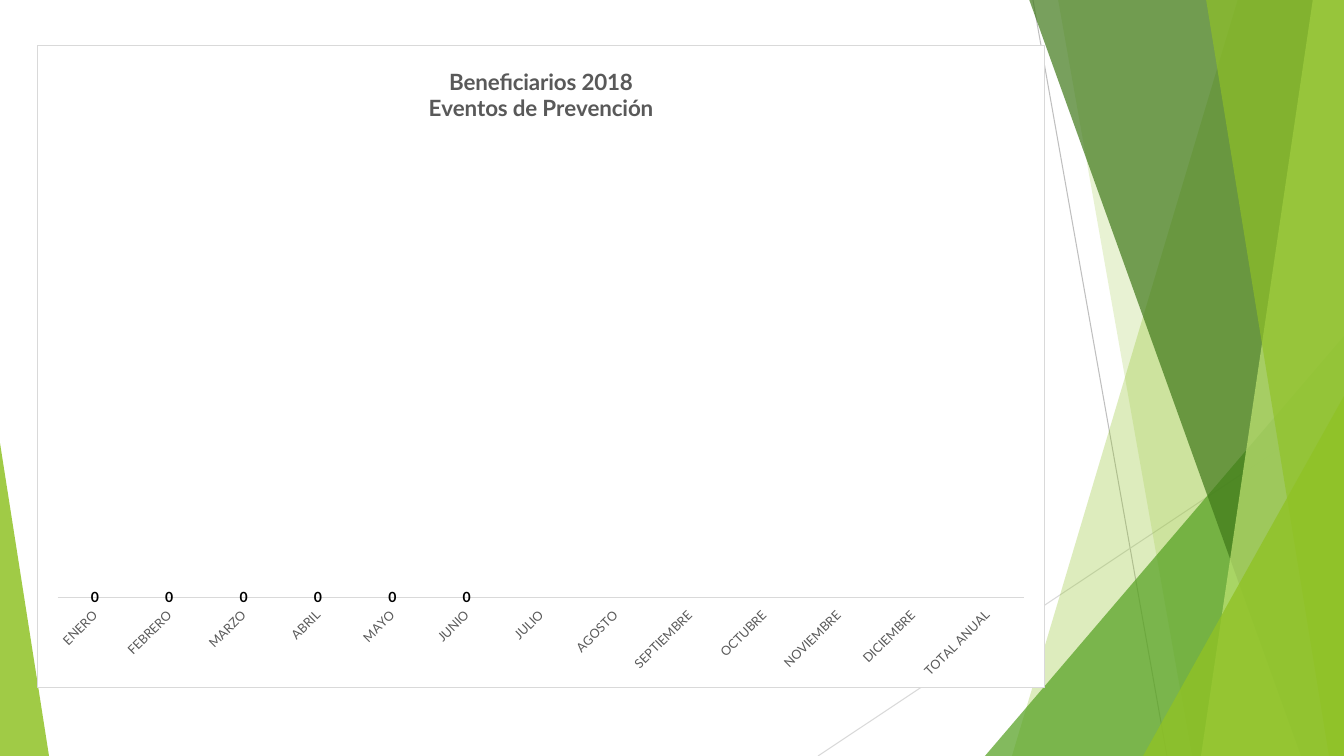
from lxml.etree import SubElement
from pptx import Presentation
from pptx.chart.data import CategoryChartData
from pptx.dml.color import RGBColor
from pptx.enum.chart import XL_CHART_TYPE as ChartType
from pptx.enum.chart import XL_TICK_LABEL_POSITION as TickLabels
from pptx.enum.chart import XL_TICK_MARK as TickMark
from pptx.enum.shapes import MSO_CONNECTOR as Connector
from pptx.enum.shapes import MSO_SHAPE as Preset
from pptx.oxml import parse_xml
from pptx.oxml.ns import nsdecls, qn
from pptx.util import Emu, Pt

PX = 914400 / 100.8
WIDTH, HEIGHT = 1344, 756
FONT = "Lato"

LIME = RGBColor(0x90, 0xC2, 0x26)
GREEN = RGBColor(0x54, 0xA0, 0x21)
FOREST = RGBColor(0x3F, 0x78, 0x19)
PALE = RGBColor(0xC0, 0xE4, 0x74)
SILVER = RGBColor(0xBF, 0xBF, 0xBF)
MIST = RGBColor(0xD9, 0xD9, 0xD9)
SLATE = RGBColor(0x59, 0x59, 0x59)
BLACK = RGBColor(0, 0, 0)
WHITE = RGBColor(0xFF, 0xFF, 0xFF)
AMBER = [
    (0, RGBColor(0xC2, 0x96, 0x00)),
    (80, RGBColor(0xFC, 0xC3, 0x00)),
    (100, RGBColor(0xFD, 0xC4, 0x00)),
]

RAYS = [((1033, 0), (1167, 756), SILVER), ((1344, 406), (818, 756), MIST)]
BANDS = [
    ("band", 1238, 1012, LIME, 30),
    ("band", 1058, 1192, LIME, 20),
    ("triangle", (985, 336, 359, 420), 1, GREEN, 72),
    ("band", 1029, 1301, FOREST, 70),
    ("band", 1313, 1201, PALE, 70),
    ("band", 1206, 1329, LIME, 65),
    ("triangle", (1143, 396, 201, 360), 1, LIME, 80),
    ("triangle", (0, 443, 49, 313), 0, LIME, 85),
]

TITLE = ["Beneficiarios 2018", "Eventos de Prevención"]
BENEFICIARIES = {
    "ENERO": 0, "FEBRERO": 0, "MARZO": 0, "ABRIL": 0, "MAYO": 0, "JUNIO": 0,
    "JULIO": None, "AGOSTO": None, "SEPTIEMBRE": None, "OCTUBRE": None,
    "NOVIEMBRE": None, "DICIEMBRE": None, "TOTAL ANUAL": None,
}
CHART_BOX = (37, 45, 1008, 643)
PLOT = {"x": 0.02, "y": 0.15, "w": 0.96, "h": 0.71}
TITLE_FORMAT = {"name": FONT, "size": Pt(16), "bold": True}
LABEL_FORMAT = {"name": FONT, "size": Pt(10), "bold": True}
MONTH_FORMAT = {"name": FONT, "size": Pt(9), "bold": False}


def px(*lengths):
    return [Emu(round(length * PX)) for length in lengths]


def style(font, settings, color):
    for key, value in settings.items():
        setattr(font, key, value)
    font.color.rgb = color


def add_ray(slide, start, end, color):
    ray = slide.shapes.add_connector(Connector.STRAIGHT, *px(*start, *end))
    ray.line.color.rgb = color
    ray.line.width = Pt(0.75)
    SubElement(ray._element.spPr, qn("a:effectLst"))


def add_band(slide, kind, first, second, color, opacity):
    if kind == "band":
        outline = slide.shapes.build_freeform(first, -1, scale=PX)
        outline.add_line_segments([(WIDTH, -1), (WIDTH, HEIGHT), (second, HEIGHT)])
        band = outline.convert_to_shape()
    else:
        band = slide.shapes.add_shape(Preset.ISOSCELES_TRIANGLE, *px(*first))
        band.adjustments[0] = second
    band.shadow.inherit = False
    band.fill.solid()
    band.fill.fore_color.rgb = color
    band.line.fill.background()
    tint = band._element.spPr.find(".//" + qn("a:srgbClr"))
    SubElement(tint, qn("a:alpha"), val=str(opacity * 1000))


def frame_chart(chart):
    chart._chartSpace.chart.addnext(parse_xml(
        f'<c:spPr {nsdecls("c", "a")}>'
        f'<a:solidFill><a:srgbClr val="{WHITE}"/></a:solidFill>'
        f'<a:ln w="9525"><a:solidFill><a:srgbClr val="{MIST}"/></a:solidFill></a:ln>'
        '</c:spPr>'))
    plot_area = chart._chartSpace.chart.plotArea
    for layout in plot_area.findall(qn("c:layout")):
        plot_area.remove(layout)
    places = "".join(f'<c:{key} val="{value}"/>' for key, value in PLOT.items())
    plot_area.insert(0, parse_xml(
        f'<c:layout {nsdecls("c")}><c:manualLayout><c:layoutTarget val="inner"/>'
        f'<c:xMode val="edge"/><c:yMode val="edge"/>{places}'
        '</c:manualLayout></c:layout>'))


def add_beneficiaries(slide):
    data = CategoryChartData()
    data.categories = list(BENEFICIARIES)
    data.add_series("Series 1", list(BENEFICIARIES.values()))
    chart = slide.shapes.add_chart(
        ChartType.COLUMN_STACKED, *px(*CHART_BOX), data).chart
    chart.has_legend = False
    style(chart.font, {"name": FONT, "size": Pt(10)}, BLACK)
    frame_chart(chart)

    heading = chart.chart_title.text_frame
    heading.text = "\n".join(TITLE)
    for paragraph in heading.paragraphs:
        style(paragraph.runs[0].font, TITLE_FORMAT, SLATE)
    chart.chart_title.include_in_layout = False

    months = chart.category_axis
    months.major_tick_mark = months.minor_tick_mark = TickMark.NONE
    months.tick_label_position = TickLabels.LOW
    months.format.line.color.rgb = MIST
    months.format.line.width = Pt(1)
    style(months.tick_labels.font, MONTH_FORMAT, SLATE)
    months._element.find(qn("c:txPr")).find(qn("a:bodyPr")).set("rot", "-2700000")

    amounts = chart.value_axis
    amounts.visible = False
    amounts.has_major_gridlines = False
    amounts.minimum_scale = 0

    columns = chart.plots[0]
    columns.vary_by_categories = False
    columns.gap_width, columns.overlap = 150, 100
    series = columns.series[0]
    stops = "".join(f'<a:gs pos="{at * 1000}"><a:srgbClr val="{color}"/></a:gs>'
                    for at, color in AMBER)
    series._element.get_or_add_spPr().append(parse_xml(
        f'<a:gradFill {nsdecls("a")}><a:gsLst>{stops}</a:gsLst>'
        '<a:lin ang="16200000" scaled="0"/></a:gradFill>'))
    series.data_labels.show_value = True
    style(series.data_labels.font, LABEL_FORMAT, BLACK)


def main():
    deck = Presentation()
    deck.slide_width, deck.slide_height = px(WIDTH, HEIGHT)
    slide = deck.slides.add_slide(deck.slide_layouts[6])
    for ray in RAYS:
        add_ray(slide, *ray)
    for band in BANDS:
        add_band(slide, *band)
    add_beneficiaries(slide)
    deck.save("out.pptx")


if __name__ == "__main__":
    main()
